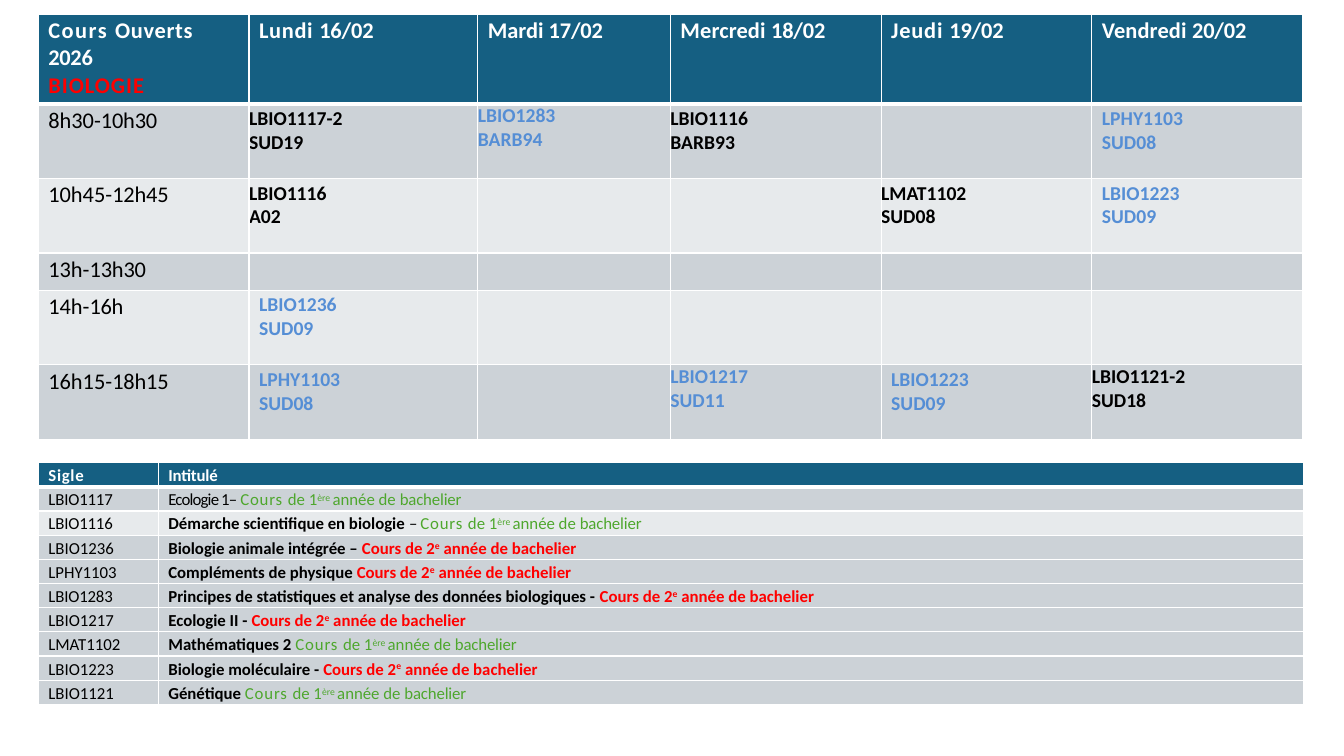
"""Build the open-course timetable slide for biology."""
from lxml import etree
from pptx import Presentation
from pptx.dml.color import RGBColor
from pptx.oxml.ns import qn
from pptx.util import Inches, Pt

THEME = {
    "font": "Calibri", "header_size": 16, "course_size": 14, "list_size": 12,
    "header": "155F82", "dark": "CCD2D7", "light": "E7EAEC",
    "white": "FFFFFF", "black": "000000", "red": "FF0000",
    "blue": "558ED5", "green": "4EA72D", "thin": 1, "thick": 3,
}
LEFT, WIDTH = 0.38, 12.55
INDENT, INSET = 0.1, 0.03

CORNER = [("Cours ", 1.1), ("Ouverts", 0.5), ("\n", 0), ("2026", -0.2), ("\n", 0), ("BIOLOGIE", 0.7)]
DAYS = [("Lundi ", "16/02", 0.5), ("Mardi ", "17/02", 0), ("Mercredi ", "18/02", 0.1),
        ("Jeudi ", "19/02", 0.6), ("Vendredi ", "20/02", 0.1)]
SLOTS = [("8h30-", "10h30", -0.1), ("10h45-", "12h45", -0.1), ("13h-", "13h30", -0.1),
         ("14h-", "16h", -0.2), ("16h15-", "18h15", -0.1)]
PLACEMENTS = {"inset": (INDENT, INSET), "edge": (0, INSET), "corner": (0, 0)}
SESSIONS = {
    (1, 1): ("LBIO1117-2", "SUD19", "edge"),
    (1, 2): ("LBIO1283", "BARB94", "corner"),
    (1, 3): ("LBIO1116", "BARB93", "edge"),
    (1, 5): ("LPHY1103", "SUD08", "inset"),
    (2, 1): ("LBIO1116", "A02", "edge"),
    (2, 4): ("LMAT1102", "SUD08", "edge"),
    (2, 5): ("LBIO1223", "SUD09", "inset"),
    (4, 1): ("LBIO1236", "SUD09", "inset"),
    (5, 1): ("LPHY1103", "SUD08", "inset"),
    (5, 3): ("LBIO1217", "SUD11", "corner"),
    (5, 4): ("LBIO1223", "SUD09", "inset"),
    (5, 5): ("LBIO1121-2", "SUD18", "corner"),
}
COURSES = [
    ("LBIO1117", "Ecologie 1– ", 1),
    ("LBIO1116", "Démarche scientifique en biologie ", 1),
    ("LBIO1236", "Biologie animale intégrée – ", 2),
    ("LPHY1103", "Compléments de physique ", 2),
    ("LBIO1283", "Principes de statistiques et analyse des données biologiques - ", 2),
    ("LBIO1217", "Ecologie II - ", 2),
    ("LMAT1102", "Mathématiques 2 ", 1),
    ("LBIO1223", "Biologie moléculaire - ", 2),
    ("LBIO1121", "Génétique ", 1),
]
YEAR_LABELS = {
    1: [("Cours ", 0.6, 0), ("de 1", 0, 0), ("ère ", 0, 24), ("année de ", 0, 0), ("bachelier", -0.1, 0)],
    2: [("Cours de 2", 0, 0), ("e", 0, 30), (" année de bachelier", 0, 0)],
}
YEARS = {code: year for code, _, year in COURSES}
TIGHT_CODES = {"LBIO1117", "LBIO1116", "LBIO1283"}

TIMETABLE_TOP, TIMETABLE_COLUMNS = 0.14, [2.09, 2.27, 1.91, 2.09, 2.09, 2.09]
TIMETABLE_ROWS = [0.89, 0.74, 0.74, 0.37, 0.74, 0.74]
LIST_TOP, LIST_COLUMNS = 4.59, [1.19, 11.36]
LIST_ROWS = [0.24] * (len(COURSES) + 1)


def styled(text, color, bold=False, spacing=0, baseline=0):
    return text, THEME[color], bold, spacing, baseline


def write(cell, pieces, size, indent=INDENT, inset=INSET):
    cell.margin_top = Inches(inset)
    paragraph = cell.text_frame.paragraphs[0]
    paragraph._p.get_or_add_pPr().set("marL", str(Inches(indent)))
    for text, color, bold, spacing, baseline in pieces:
        if text == "\n":
            paragraph.add_line_break()
            line_break = paragraph._p.findall(qn("a:br"))[-1]
            etree.SubElement(line_break, qn("a:rPr")).set("sz", str(size * 100))
            continue
        run = paragraph.add_run()
        run.text = text
        run.font.name, run.font.size, run.font.bold = THEME["font"], Pt(size), bold
        run.font.color.rgb = RGBColor.from_string(color)
        properties = run._r.get_or_add_rPr()
        properties.set("spc", str(round(spacing * 100)))
        if baseline:
            properties.set("baseline", str(baseline * 1000))


def paint(cell, fill, row):
    properties = cell._tc.get_or_add_tcPr()
    for side in "LRTB":
        heavy = (row, side) in ((0, "B"), (1, "T"))
        line = etree.SubElement(properties, qn("a:ln" + side))
        line.set("w", str(Pt(THEME["thick" if heavy else "thin"])))
        color = etree.SubElement(etree.SubElement(line, qn("a:solidFill")), qn("a:srgbClr"))
        color.set("val", THEME["white"])
    cell.fill.solid()
    cell.fill.fore_color.rgb = RGBColor.from_string(THEME[fill])
    cell.margin_left = cell.margin_right = cell.margin_top = cell.margin_bottom = 0


def add_grid(slide, top, columns, rows, light_rows):
    frame = slide.shapes.add_table(len(rows), len(columns), Inches(LEFT), Inches(top),
                                   Inches(WIDTH), Inches(sum(rows)))
    table = frame.table
    table.horz_banding = False
    for column, width in zip(table.columns, columns):
        column.width = Inches(width)
    for index, height in enumerate(rows):
        table.rows[index].height = Inches(height)
        fill = "header" if index == 0 else "light" if index in light_rows else "dark"
        for cell in table.rows[index].cells:
            paint(cell, fill, index)
    return table


def add_timetable(slide):
    table = add_grid(slide, TIMETABLE_TOP, TIMETABLE_COLUMNS, TIMETABLE_ROWS, {2, 4})
    size = THEME["header_size"]
    corner = [styled(text, "red" if text == "BIOLOGIE" else "white", True, spacing)
              for text, spacing in CORNER]
    write(table.cell(0, 0), corner, size)
    for column, (day, date, spacing) in enumerate(DAYS, 1):
        write(table.cell(0, column),
              [styled(day, "white", True, spacing), styled(date, "white", True, -0.1)], size)
    for row, (start, end, spacing) in enumerate(SLOTS, 1):
        write(table.cell(row, 0), [styled(start, "black"), styled(end, "black", False, spacing)], size)
    for (row, column), (code, room, placement) in SESSIONS.items():
        color = "black" if YEARS[code[:8]] == 1 else "blue"
        pieces = [styled(text, color, True) for text in (code, "\n", room)]
        write(table.cell(row, column), pieces, THEME["course_size"], *PLACEMENTS[placement])


def title_pieces(title, year):
    if title.startswith("Ecologie 1"):
        pieces = [styled(title, "black", False, -0.6)]
    else:
        pieces = [styled(title, "black", True)]
    if title.startswith("Démarche"):
        pieces.append(styled("– ", "black", False, -0.6))
    color = "green" if year == 1 else "red"
    return pieces + [styled(text, color, year == 2, spacing, baseline)
                     for text, spacing, baseline in YEAR_LABELS[year]]


def add_course_list(slide):
    table = add_grid(slide, LIST_TOP, LIST_COLUMNS, LIST_ROWS, {2})
    size = THEME["list_size"]
    write(table.cell(0, 0), [styled("Sigle", "white", True, 0.5)], size)
    write(table.cell(0, 1), [styled("Intitulé", "white", True, -0.1)], size)
    for row, (code, title, year) in enumerate(COURSES, 1):
        spacing = -0.1 if code in TIGHT_CODES else 0
        write(table.cell(row, 0), [styled(code, "black", False, spacing)], size)
        write(table.cell(row, 1), title_pieces(title, year), size)


def main():
    presentation = Presentation()
    presentation.slide_width, presentation.slide_height = Inches(13.33), Inches(7.5)
    slide = presentation.slides.add_slide(presentation.slide_layouts[6])
    add_timetable(slide)
    add_course_list(slide)
    presentation.save("out.pptx")


if __name__ == "__main__":
    main()
